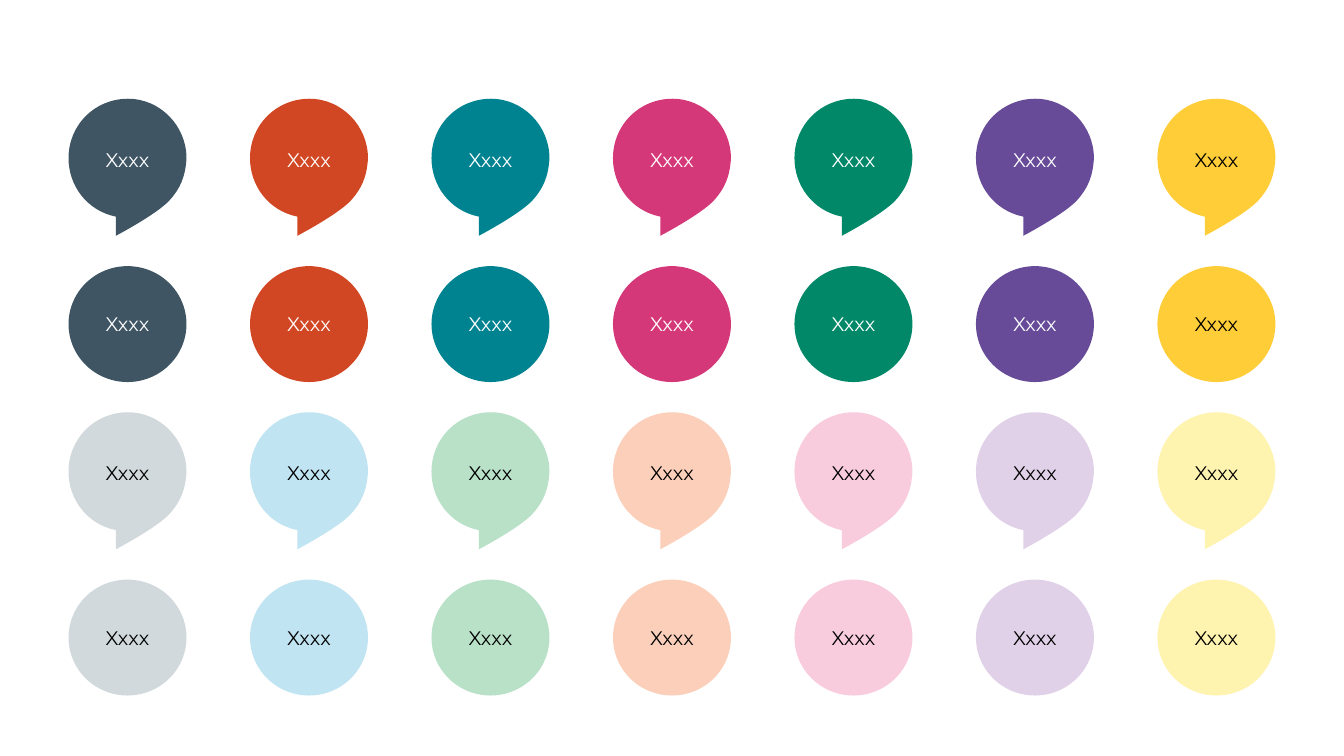
from lxml.etree import SubElement
from pptx import Presentation
from pptx.dml.color import RGBColor
from pptx.enum.shapes import MSO_SHAPE as Preset
from pptx.enum.text import MSO_ANCHOR as Anchor, PP_ALIGN as Align
from pptx.oxml.ns import qn
from pptx.util import Inches, Pt

BLACK = RGBColor(0x00, 0x00, 0x00)
WHITE = RGBColor(0xFF, 0xFF, 0xFF)
SLATE = RGBColor(0x3F, 0x55, 0x64)
RED = RGBColor(0xD2, 0x47, 0x23)
TEAL = RGBColor(0x00, 0x83, 0x91)
PINK = RGBColor(0xD5, 0x38, 0x78)
GREEN = RGBColor(0x00, 0x88, 0x68)
PURPLE = RGBColor(0x67, 0x4B, 0x99)
YELLOW = RGBColor(0xFF, 0xCD, 0x37)
PALE_GREY = RGBColor(0xD1, 0xD9, 0xDC)
PALE_BLUE = RGBColor(0xC0, 0xE4, 0xF2)
PALE_GREEN = RGBColor(0xB8, 0xE1, 0xC8)
PALE_ORANGE = RGBColor(0xFB, 0xCF, 0xB9)
PALE_PINK = RGBColor(0xF8, 0xCC, 0xDC)
PALE_PURPLE = RGBColor(0xE1, 0xD1, 0xE8)
PALE_YELLOW = RGBColor(0xFF, 0xF3, 0xB0)

STRONG = (SLATE, RED, TEAL, PINK, GREEN, PURPLE, YELLOW)
PALE = (PALE_GREY, PALE_BLUE, PALE_GREEN, PALE_ORANGE, PALE_PINK, PALE_PURPLE, PALE_YELLOW)
DARK_FILLS = STRONG[:-1]

GRID_LEFT, COLUMN_PITCH = 0.68, 1.8
GRID_TOP, BAND_PITCH = 0.98, 3.11
CIRCLE_OFFSET = 1.66
CIRCLE_WIDTH, CIRCLE_HEIGHT = 1.17, 1.15
INSET, TAIL_INSET = 0.12, 0.28

BUBBLE_START = (1.0, 1.01)
BUBBLE_SEGMENTS = (
    ((1.11, 0.89), (1.16, 0.77), (1.17, 0.59)),
    ((1.17, 0.27), (0.91, 0), (0.59, 0)),
    ((0.26, 0), (0, 0.26), (0, 0.59)),
    ((0, 0.86), (0.18, 1.11), (0.47, 1.17)),
    ((0.47, 1.36),),
    ((0.47, 1.36), (0.87, 1.15), BUBBLE_START),
)


def style_label(shape, color, bottom_inset):
    """Fill a shape and centre its label."""
    shape.shadow.inherit = False
    shape.fill.solid()
    shape.fill.fore_color.rgb = color
    shape.line.fill.background()
    frame = shape.text_frame
    frame.word_wrap = True
    frame.vertical_anchor = Anchor.MIDDLE
    frame.margin_left = frame.margin_right = frame.margin_top = Inches(INSET)
    frame.margin_bottom = Inches(bottom_inset)
    paragraph = frame.paragraphs[0]
    paragraph.text = "Xxxx"
    paragraph.alignment = Align.CENTER
    paragraph.font.name = "Montserrat"
    paragraph.font.size = Pt(14)
    paragraph.font.color.rgb = WHITE if color in DARK_FILLS else BLACK


def bend_segments(shape, segments):
    """Turn straight segments that have control points into cubic curves."""
    lines = list(shape.element.iter(qn("a:lnTo")))
    for line, (*controls, _) in zip(lines, segments):
        if not controls:
            continue
        end = line[0]
        line.tag = qn("a:cubicBezTo")
        for x, y in controls:
            SubElement(line, qn("a:pt"), x=str(Inches(x)), y=str(Inches(y)))
        line.append(end)


def add_bubble(slide, left, top, color):
    """Add a speech bubble with its tail at the bottom."""
    corners = [BUBBLE_START] + [segment[-1] for segment in BUBBLE_SEGMENTS]
    start, *rest = [(Inches(left + x), Inches(top + y)) for x, y in corners]
    builder = slide.shapes.build_freeform(*start)
    builder.add_line_segments(rest, close=True)
    bubble = builder.convert_to_shape()
    bend_segments(bubble, BUBBLE_SEGMENTS)
    style_label(bubble, color, TAIL_INSET)


def add_circle(slide, left, top, color):
    """Add a round label."""
    box = [Inches(length) for length in (left, top, CIRCLE_WIDTH, CIRCLE_HEIGHT)]
    style_label(slide.shapes.add_shape(Preset.OVAL, *box), color, INSET)


def main():
    """Build the slide with two bands of bubbles and circles."""
    presentation = Presentation()
    presentation.slide_width, presentation.slide_height = Inches(13.33), Inches(7.5)
    slide = presentation.slides.add_slide(presentation.slide_layouts[6])
    for band, colors in enumerate((STRONG, PALE)):
        band_top = GRID_TOP + band * BAND_PITCH
        for add_label, offset in ((add_bubble, 0), (add_circle, CIRCLE_OFFSET)):
            for column, color in enumerate(colors):
                add_label(slide, GRID_LEFT + column * COLUMN_PITCH, band_top + offset, color)
    presentation.save("out.pptx")


if __name__ == "__main__":
    main()
